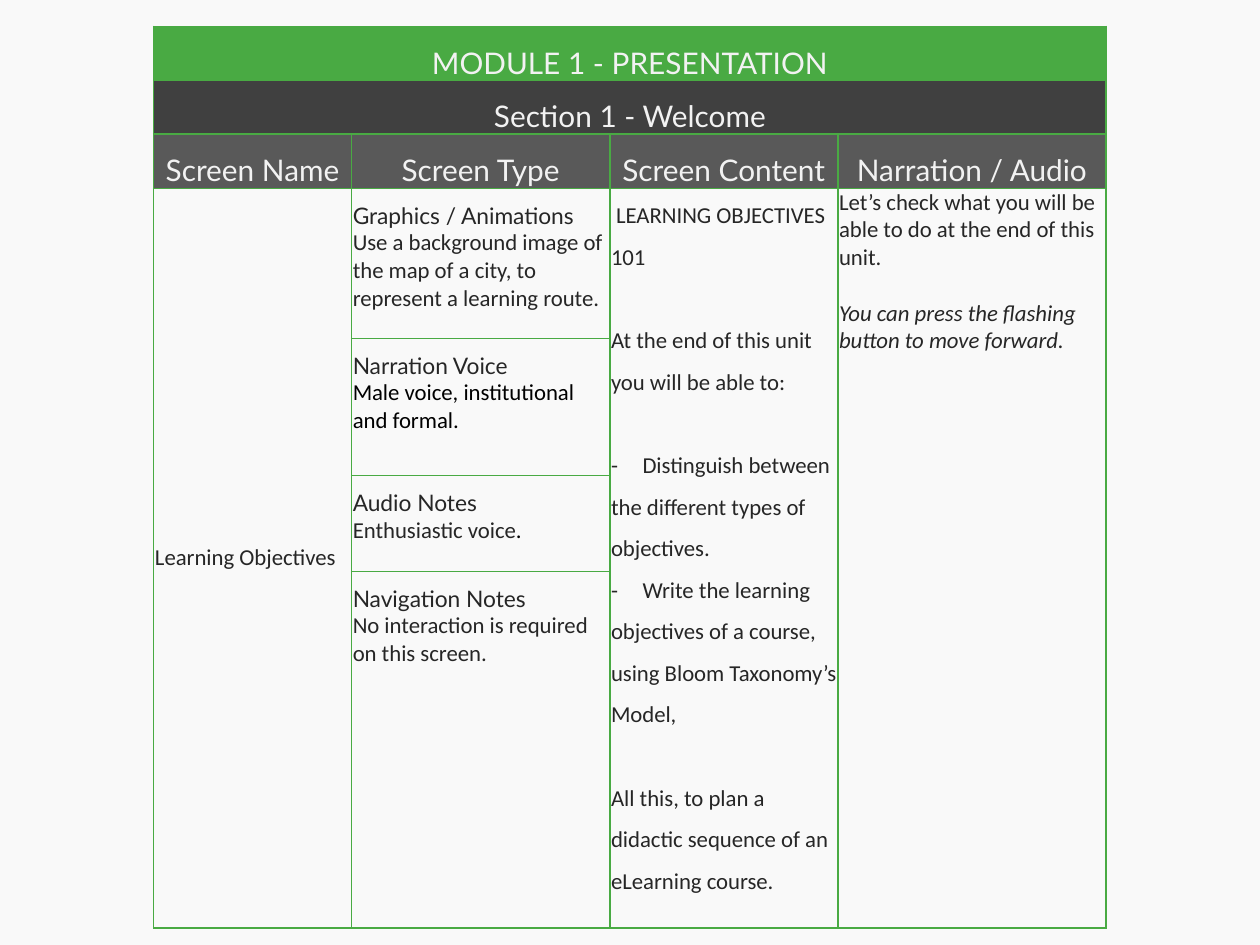
"""Build a storyboard slide: one table with module, section and screen details."""
from lxml import etree
from pptx import Presentation
from pptx.dml.color import RGBColor
from pptx.enum.text import MSO_ANCHOR, PP_ALIGN
from pptx.oxml.ns import qn
from pptx.util import Emu, Inches, Pt

CENTER, LEFT = PP_ALIGN.CENTER, PP_ALIGN.LEFT
MIDDLE, TOP = MSO_ANCHOR.MIDDLE, MSO_ANCHOR.TOP
COLORS = {"page": "F9F9F9", "green": "49AA43", "dark": "404040", "grey": "595959",
          "light": "F2F2F2", "ink": "262626", "black": "000000"}
TABLE_LEFT, TABLE_TOP = 1.22, 0.21
COLUMNS = [1.57, 2.05, 1.81, 2.13]
ROWS = [0.43, 0.42, 0.43, 1.19, 1.09, 0.76, 2.83]
HEADING_SIZE, BODY_SIZE = 17, 13
WIDE, SINGLE = 1.5, 1.0
WIDE_GAP, SINGLE_GAP = 23.8, 15.9
DASH_TAB = 0.25

BANNERS = [("MODULE 1 - PRESENTATION", "green"), ("Section 1 - Welcome", "dark")]
HEADERS = ["Screen Name", "Screen Type", "Screen Content", "Narration / Audio"]
SCREEN_NAME = "Learning Objectives"
SCREEN_TYPES = [
    ("Graphics / Animations",
     [("Use a background image of the map of a city, to represent a learning route.", "ink")]),
    ("Narration Voice", [("Male voice, institutional and formal.", "black")]),
    ("Audio Notes", [("Enthusiastic voice", "ink"), (".", "black")]),
    ("Navigation Notes", [("No interaction is required on this screen.", "ink")]),
]
SCREEN_CONTENT = [
    (" LEARNING OBJECTIVES 101", 0),
    ("At the end of this unit you will be able to:", WIDE_GAP),
    ("-\tDistinguish between the different types of objectives.", WIDE_GAP),
    ("-\tWrite the learning objectives of a course, using Bloom Taxonomy’s Model,", 0),
    ("All this, to plan a didactic sequence of an eLearning course.", WIDE_GAP),
]
NARRATION = [
    ("Let’s check what you will be able to do at the end of this unit.", 0, False),
    ("You can press the flashing button to move forward.", SINGLE_GAP, True),
]


def rgb(name):
    return RGBColor.from_string(COLORS[name])


def style_cell(cell, fill, anchor=TOP):
    properties = cell._tc.get_or_add_tcPr()
    for side in ("a:lnL", "a:lnR", "a:lnT", "a:lnB"):
        line = etree.SubElement(properties, qn(side), w=str(Pt(1)))
        solid = etree.SubElement(line, qn("a:solidFill"))
        etree.SubElement(solid, qn("a:srgbClr"), val=COLORS["green"])
    cell.fill.solid()
    cell.fill.fore_color.rgb = rgb(fill)
    cell.margin_left = cell.margin_right = Inches(0.01)
    cell.margin_top = cell.margin_bottom = Emu(0)
    cell.vertical_anchor = anchor


def write(cell, runs, size=BODY_SIZE, font="Calibri", spacing=SINGLE,
          gap=0, align=LEFT, italic=False):
    frame = cell.text_frame
    paragraph = frame.add_paragraph() if frame.text else frame.paragraphs[0]
    paragraph.alignment = align
    paragraph.line_spacing = spacing
    paragraph.space_before = Pt(gap)
    for text, color in runs:
        run = paragraph.add_run()
        run.text = text
        run.font.name = font
        run.font.size = Pt(size)
        run.font.italic = italic
        run.font.color.rgb = rgb(color)
    return paragraph


def add_dash_tab(paragraph):
    stops = etree.SubElement(paragraph._p.get_or_add_pPr(), qn("a:tabLst"))
    etree.SubElement(stops, qn("a:tab"), pos=str(Inches(DASH_TAB)), algn="l")


def write_heading(cell, text):
    write(cell, [(text, "light")], HEADING_SIZE, "Lato", WIDE, align=CENTER)


def main():
    deck = Presentation()
    deck.slide_width, deck.slide_height = Inches(10), Inches(7.5)
    slide = deck.slides.add_slide(deck.slide_layouts[6])
    slide.background.fill.solid()
    slide.background.fill.fore_color.rgb = rgb("page")

    storyboard = slide.shapes.add_table(
        len(ROWS), len(COLUMNS), Inches(TABLE_LEFT), Inches(TABLE_TOP),
        Inches(sum(COLUMNS)), Inches(sum(ROWS))).table
    for column, width in zip(storyboard.columns, COLUMNS):
        column.width = Inches(width)
    for row, height in zip(storyboard.rows, ROWS):
        row.height = Inches(height)

    header_row = len(BANNERS)
    body_row, last_row, last_column = header_row + 1, len(ROWS) - 1, len(COLUMNS) - 1
    row_fills = [fill for _, fill in BANNERS] + ["grey"] + ["page"] * len(SCREEN_TYPES)
    for r, fill in enumerate(row_fills):
        for c in range(len(COLUMNS)):
            centred = r <= header_row or c == 0
            style_cell(storyboard.cell(r, c), fill, MIDDLE if centred else TOP)

    for r, (text, _) in enumerate(BANNERS):
        storyboard.cell(r, 0).merge(storyboard.cell(r, last_column))
        write_heading(storyboard.cell(r, 0), text)
    for c, text in enumerate(HEADERS):
        write_heading(storyboard.cell(header_row, c), text)
    for c in (0, 2, 3):
        storyboard.cell(body_row, c).merge(storyboard.cell(last_row, c))

    write(storyboard.cell(body_row, 0), [(SCREEN_NAME, "ink")])
    for r, (label, runs) in enumerate(SCREEN_TYPES, body_row):
        cell = storyboard.cell(r, 1)
        write(cell, [(label, "ink")], font="Lato", spacing=WIDE)
        write(cell, runs)
    for text, gap in SCREEN_CONTENT:
        paragraph = write(storyboard.cell(body_row, 2), [(text, "ink")], spacing=WIDE, gap=gap)
        if text.startswith("-"):
            add_dash_tab(paragraph)
    for text, gap, italic in NARRATION:
        write(storyboard.cell(body_row, 3), [(text, "ink")], gap=gap, italic=italic)

    deck.save("out.pptx")


if __name__ == "__main__":
    main()
